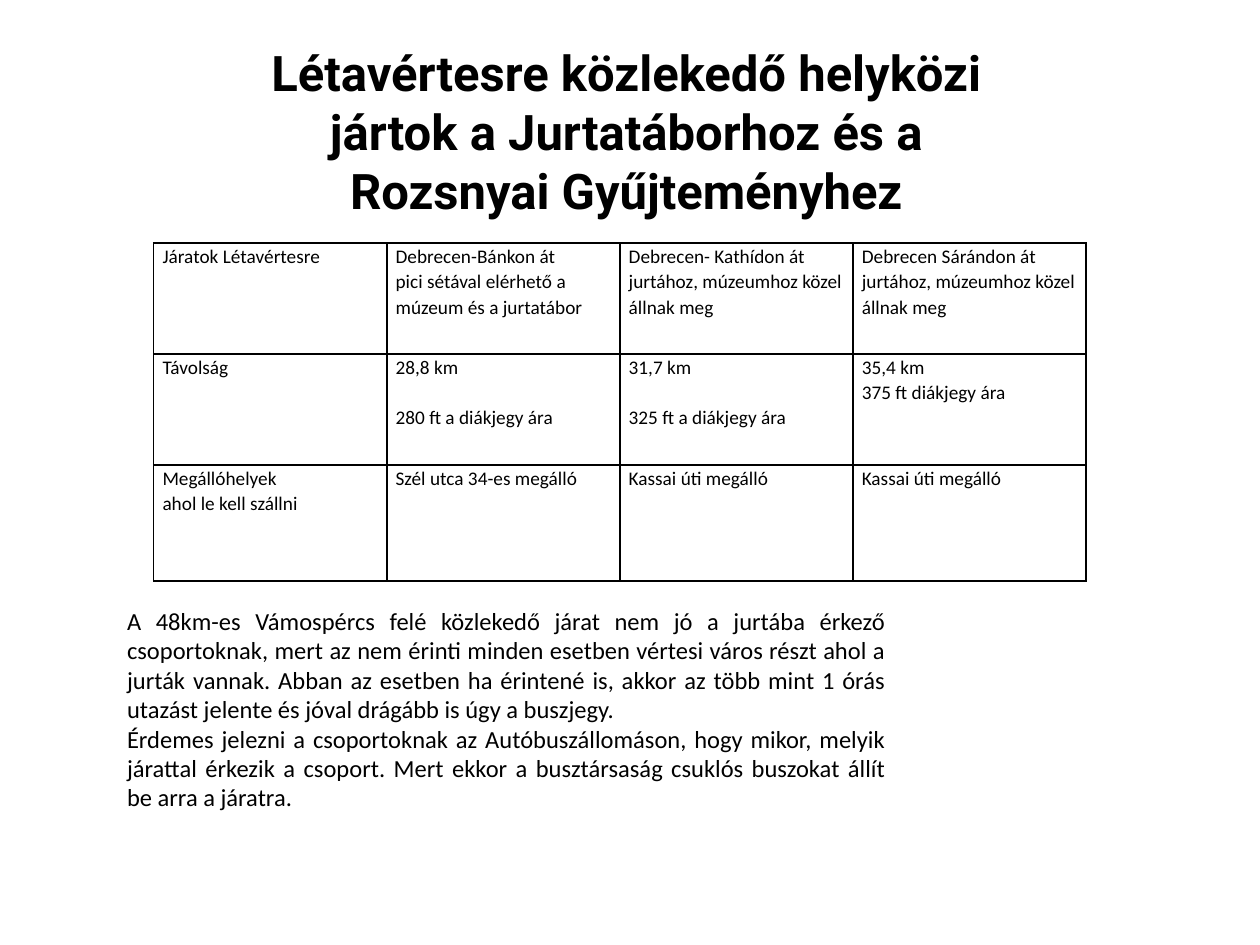
from lxml.etree import SubElement
from pptx import Presentation
from pptx.dml.color import RGBColor
from pptx.enum.text import MSO_ANCHOR, MSO_AUTO_SIZE, PP_ALIGN
from pptx.oxml.ns import qn
from pptx.util import Inches, Pt

TITLE = "Létavértesre közlekedő helyközi jártok a Jurtatáborhoz és a Rozsnyai Gyűjteményhez"
ROUTES = [
    [
        ["Járatok Létavértesre"],
        ["Debrecen-Bánkon át", "pici sétával elérhető a múzeum és a jurtatábor"],
        ["Debrecen- Kathídon át", "jurtához, múzeumhoz közel állnak meg"],
        ["Debrecen Sárándon át jurtához, múzeumhoz közel állnak meg"],
    ],
    [
        ["Távolság"],
        ["28,8 km", "280 ft a diákjegy ára"],
        ["31,7 km", "325 ft a diákjegy ára"],
        ["35,4 km", "375 ft diákjegy ára"],
    ],
    [
        ["Megállóhelyek", "ahol le kell szállni"],
        ["Szél utca 34-es megálló"],
        ["Kassai úti megálló"],
        ["Kassai úti megálló"],
    ],
]
SPACED_PRICES = {"280 ft a diákjegy ára", "325 ft a diákjegy ára"}
ADVICE = [
    "A 48km-es Vámospércs felé közlekedő járat nem jó a jurtába érkező csoportoknak, "
    "mert az nem érinti minden esetben vértesi város részt ahol a jurták vannak. "
    "Abban az esetben ha érintené is, akkor az több mint 1 órás utazást jelente "
    "és jóval drágább is úgy a buszjegy.",
    "Érdemes jelezni a csoportoknak az Autóbuszállomáson, hogy mikor, melyik járattal "
    "érkezik a csoport. Mert ekkor a busztársaság csuklós buszokat állít be arra a járatra.",
]
BLACK = "000000"
COLUMN_WIDTH = 1.85
ROW_HEIGHTS = [0.88, 0.88, 0.92]
TITLE_FONT = {"name": "Roboto", "size": Pt(28), "bold": True}
CELL_FONT = {"name": "Calibri", "size": Pt(11), "bold": False}
ADVICE_FONT = {"name": "Calibri", "size": Pt(14), "bold": False}
CELL_FORMAT = {"margin_left": Inches(0.07), "margin_right": Inches(0.07),
               "margin_top": 0, "margin_bottom": 0, "vertical_anchor": MSO_ANCHOR.TOP}
FRAME_FORMAT = {"word_wrap": True, "auto_size": MSO_AUTO_SIZE.SHAPE_TO_FIT_TEXT,
                "vertical_anchor": MSO_ANCHOR.TOP}


def set_all(target, values):
    for name, value in values.items():
        setattr(target, name, value)


def colour(hex_value):
    return RGBColor.from_string(hex_value)


def write(frame, lines, font, layout):
    for index, line in enumerate(lines):
        para = frame.paragraphs[0] if index == 0 else frame.add_paragraph()
        set_all(para, layout)
        if line in SPACED_PRICES:
            para.space_before = Pt(14.4)
        span = para.add_run()
        span.text = line
        set_all(span.font, font)
        span.font.color.rgb = colour(BLACK)


def add_borders(cell):
    properties = cell._tc.get_or_add_tcPr()
    for side in ("lnL", "lnR", "lnT", "lnB"):
        line = SubElement(properties, qn(f"a:{side}"), w=str(Pt(1)))
        fill = SubElement(line, qn("a:solidFill"))
        SubElement(fill, qn("a:srgbClr"), val=BLACK)


def add_routes(page):
    width = COLUMN_WIDTH * len(ROUTES[0])
    table = page.shapes.add_table(
        len(ROUTES), len(ROUTES[0]), Inches(1.22), Inches(1.93),
        Inches(width), Inches(sum(ROW_HEIGHTS))).table
    set_all(table, {"first_row": False, "horz_banding": False})
    for column in table.columns:
        column.width = Inches(COLUMN_WIDTH)
    for row, height, texts in zip(table.rows, ROW_HEIGHTS, ROUTES):
        row.height = Inches(height)
        for cell, lines in zip(row.cells, texts):
            set_all(cell, CELL_FORMAT)
            add_borders(cell)
            cell.fill.background()
            write(cell.text_frame, lines, CELL_FONT, {"line_spacing": 1.07})


def main():
    deck = Presentation()
    set_all(deck, {"slide_width": Inches(10), "slide_height": Inches(7.5)})
    page = deck.slides.add_slide(deck.slide_layouts[5])

    title = page.shapes.title
    set_all(title, {"left": Inches(1.93), "top": Inches(0.29),
                    "width": Inches(6.08), "height": Inches(1.51)})
    set_all(title.text_frame, FRAME_FORMAT)
    write(title.text_frame, [TITLE], TITLE_FONT, {"alignment": PP_ALIGN.CENTER})

    add_routes(page)

    box = page.shapes.add_textbox(Inches(0.91), Inches(4.76), Inches(6.22), Inches(2.02))
    set_all(box.text_frame, FRAME_FORMAT)
    write(box.text_frame, ADVICE, ADVICE_FONT, {"alignment": PP_ALIGN.JUSTIFY})

    deck.save("out.pptx")


if __name__ == "__main__":
    main()
